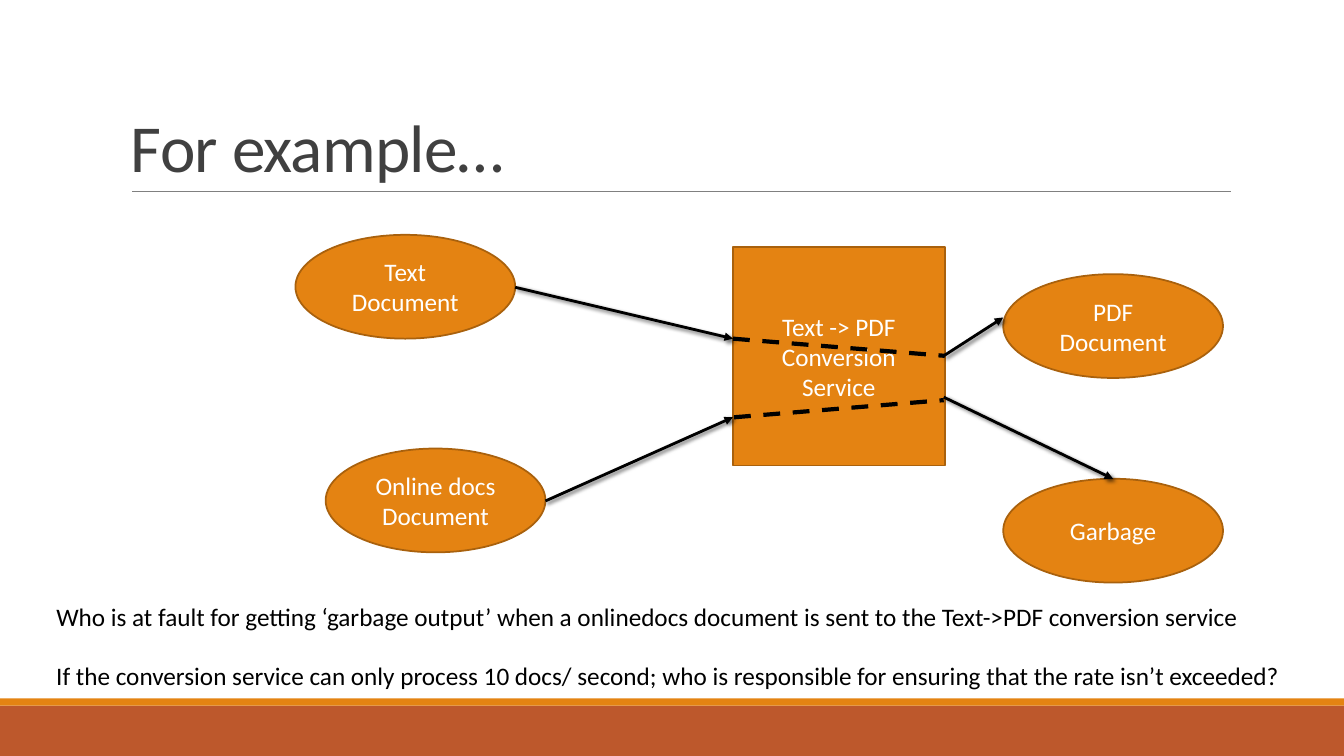
from typing import NamedTuple

from lxml.etree import SubElement
from pptx import Presentation
from pptx.dml.color import RGBColor
from pptx.enum.dml import MSO_LINE
from pptx.enum.shapes import MSO_CONNECTOR, MSO_SHAPE
from pptx.enum.text import MSO_ANCHOR, PP_ALIGN
from pptx.oxml.ns import qn
from pptx.util import Inches, Pt

ORANGE = RGBColor(0xE4, 0x83, 0x12)
BROWN = RGBColor(0xA9, 0x61, 0x0D)
RUST = RGBColor(0xBD, 0x58, 0x2C)
GRAY = RGBColor(0x80, 0x80, 0x80)
DARK = RGBColor(0x40, 0x40, 0x40)
BLACK = RGBColor(0, 0, 0)
WHITE = RGBColor(0xFF, 0xFF, 0xFF)


class Node(NamedTuple):
    text: str
    x: float
    y: float
    w: float = 2.18
    h: float = 1.03
    kind: MSO_SHAPE = MSO_SHAPE.OVAL


class Link(NamedTuple):
    x1: float
    y1: float
    x2: float
    y2: float


class Note(NamedTuple):
    text: str
    y: float
    w: float


NODES = [
    Node("Text -> PDF\nConversion\nService", 7.27, 2.45, 2.1, 2.17, MSO_SHAPE.RECTANGLE),
    Node("Text Document", 2.93, 2.33),
    Node("PDF Document", 9.95, 2.72),
    Node("Online docs Document", 3.23, 4.45),
    Node("Garbage", 9.95, 4.75),
]
ARROWS = [
    Link(5.11, 2.85, 7.27, 3.36),
    Link(9.36, 3.53, 9.95, 3.15),
    Link(5.41, 4.97, 7.27, 4.14),
    Link(9.36, 3.94, 11.04, 4.75),
]
PASSAGES = [Link(7.27, 3.36, 9.37, 3.53), Link(7.28, 4.14, 9.36, 3.97)]
NOTES = [
    Note("Who is at fault for getting ‘garbage output’ when a onlinedocs document "
         "is sent to the Text->PDF conversion service", 5.92, 12.28),
    Note("If the conversion service can only process 10 docs/ second; who is responsible "
         "for ensuring that the rate isn’t exceeded?", 6.5, 12.77),
]


def write(sp, text: str, *, size: float = 18, color: RGBColor = BLACK,
          align: PP_ALIGN = PP_ALIGN.LEFT, anchor: MSO_ANCHOR = MSO_ANCHOR.TOP,
          leading: float = 1.0, tracking: float = 0) -> None:
    tf = sp.text_frame
    tf.word_wrap = True
    tf.vertical_anchor = anchor
    for i, line in enumerate(text.split("\n")):
        p = tf.add_paragraph() if i else tf.paragraphs[0]
        p.alignment = align
        p.line_spacing = leading
        r = p.add_run()
        r.text = line
        r.font.name = "Calibri"
        r.font.size = Pt(size)
        r.font.color.rgb = color
        if tracking:
            r.font._element.set("spc", str(int(tracking * 100)))


def add_box(s, kind: MSO_SHAPE, x: float, y: float, w: float, h: float, fill: RGBColor):
    sp = s.shapes.add_shape(kind, Inches(x), Inches(y), Inches(w), Inches(h))
    sp.shadow.inherit = False
    sp.fill.solid()
    sp.fill.fore_color.rgb = fill
    sp.line.fill.background()
    return sp


def add_text(s, x: float, y: float, w: float, h: float, text: str, **style) -> None:
    write(s.shapes.add_textbox(Inches(x), Inches(y), Inches(w), Inches(h)), text, **style)


def add_node(s, node: Node) -> None:
    sp = add_box(s, node.kind, node.x, node.y, node.w, node.h, ORANGE)
    sp.line.color.rgb = BROWN
    sp.line.width = Pt(1.25)
    write(sp, node.text, color=WHITE, align=PP_ALIGN.CENTER, anchor=MSO_ANCHOR.MIDDLE)


def add_link(s, link: Link, *, color: RGBColor = BLACK, width: float = 2,
             dashed: bool = False, arrow: bool = False) -> None:
    cx = s.shapes.add_connector(MSO_CONNECTOR.STRAIGHT, *(Inches(v) for v in link))
    cx.line.color.rgb = color
    cx.line.width = Pt(width)
    if dashed:
        cx.line.dash_style = MSO_LINE.DASH
    sp_pr = cx._element.spPr
    effects = SubElement(sp_pr, qn("a:effectLst"))
    if arrow:
        SubElement(sp_pr.find(qn("a:ln")), qn("a:tailEnd"), type="triangle")
        shadow = SubElement(effects, qn("a:outerShdw"), blurRad=str(Pt(3)),
                            dist=str(Pt(2)), dir=str(45 * 60000), rotWithShape="0")
        tint = SubElement(shadow, qn("a:srgbClr"), val=str(BLACK))
        SubElement(tint, qn("a:alpha"), val="60000")


def main() -> None:
    prs = Presentation()
    prs.slide_width = Inches(13.33)
    prs.slide_height = Inches(7.5)
    s = prs.slides.add_slide(prs.slide_layouts[6])

    add_box(s, MSO_SHAPE.RECTANGLE, 0, 7, 13.33, 0.5, RUST)
    add_box(s, MSO_SHAPE.RECTANGLE, 0, 6.93, 13.33, 0.07, ORANGE)
    add_link(s, Link(1.31, 1.9, 12.21, 1.9), color=GRAY, width=0.5)
    add_text(s, 1.2, 0.31, 11, 1.59, "For example…", size=48, color=DARK,
             anchor=MSO_ANCHOR.BOTTOM, leading=0.85, tracking=-0.5)

    for node in NODES:
        add_node(s, node)
    for link in ARROWS:
        add_link(s, link, arrow=True)
    for link in PASSAGES:
        add_link(s, link, width=3, dashed=True)
    for note in NOTES:
        add_text(s, 0.46, note.y, note.w, 0.4, note.text)

    prs.save("out.pptx")


if __name__ == "__main__":
    main()
